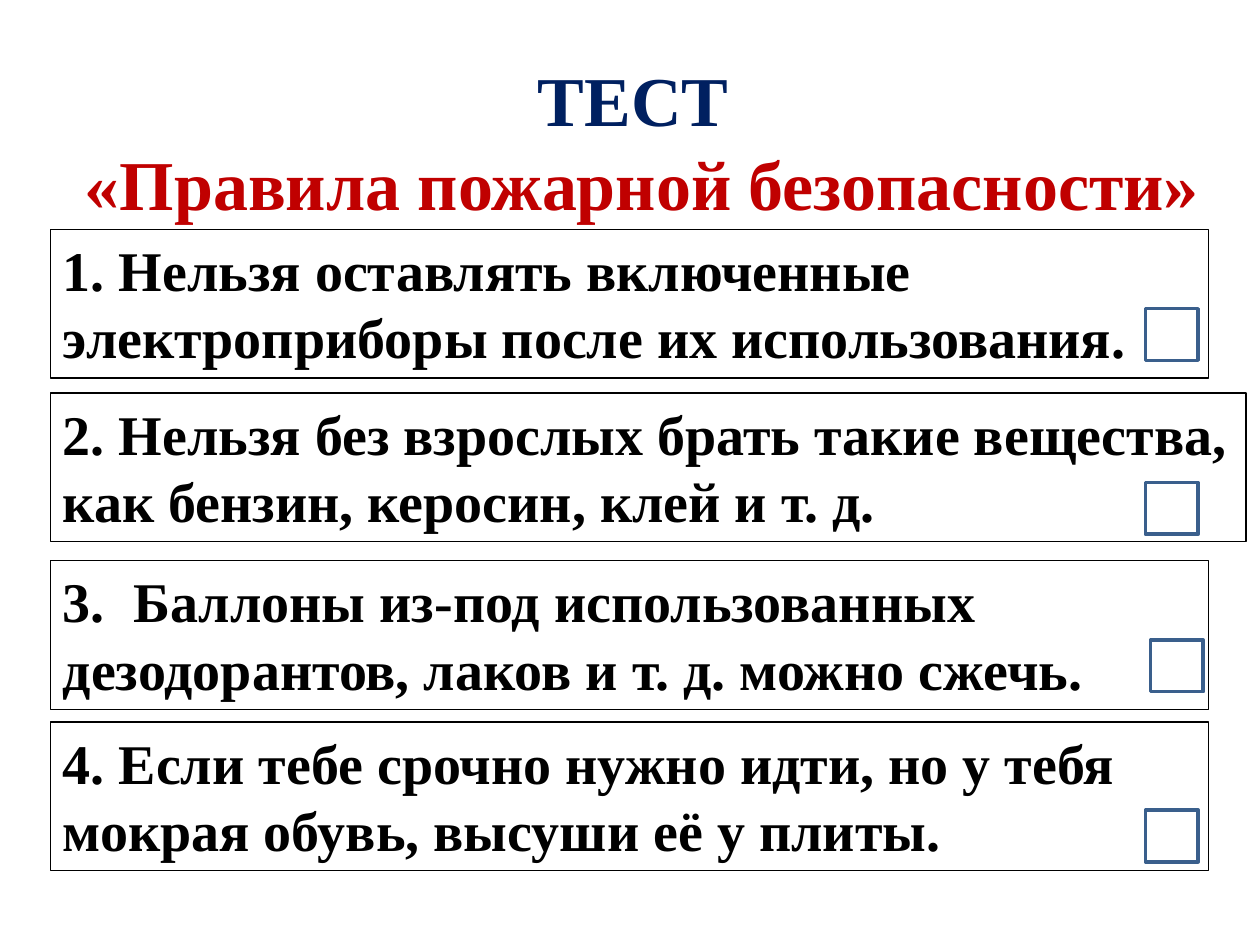
from dataclasses import dataclass

import pptx
import pptx.dml.color
import pptx.enum.shapes
import pptx.enum.text
import pptx.util
import lxml.etree


@dataclass(frozen=True)
class Theme:
    font: str = "Times New Roman"
    title_size: int = 40
    body_size: int = 32
    navy: str = "002060"
    red: str = "C00000"
    black: str = "000000"
    white: str = "FFFFFF"
    check_line: str = "3A5F8C"


THEME = Theme()
UNIT = pptx.util.Inches(0.1)  # the slide is a grid of 100 columns by 75 rows
LEFT, BOX_W, BOX_H = 4, 91.9, 11.8
CHECK_COL, CHECK_W, CHECK_H = 90.9, 4.2, 4.1

# top row, extra width, check box row, check box shift, first number, lines
QUESTIONS = [
    (18.2, 0, 24.5, 0, None,
     ["1. Нельзя оставлять включенные", "электроприборы после их использования."]),
    (31.2, 3, 38.3, 0, None,
     ["2. Нельзя без взрослых брать такие вещества,", "как бензин, керосин, клей и т. д."]),
    (44.5, 0, 50.8, 0.4, 3,
     ["Баллоны из-под использованных", "дезодорантов, лаков и т. д. можно сжечь."]),
    (57.3, 0, 64.3, 0, None,
     ["4. Если тебе срочно нужно идти, но у тебя", "мокрая обувь, высуши её у плиты."]),
]


def cells(*counts):
    return [round(n * UNIT) for n in counts]


def rgb(code):
    return pptx.dml.color.RGBColor.from_string(code)


def add_rect(s, place, line, width, fill=None):
    sp = s.shapes.add_shape(pptx.enum.shapes.MSO_SHAPE.RECTANGLE, *cells(*place))
    sp.shadow.inherit = False
    if fill:
        sp.fill.solid()
        sp.fill.fore_color.rgb = rgb(fill)
    else:
        sp.fill.background()
    sp.line.color.rgb = rgb(line)
    sp.line.width = pptx.util.Pt(width)
    return sp


def write_lines(tf, lines, size, align):
    """Write one paragraph for each (text, colour) pair."""
    tf.auto_size = pptx.enum.text.MSO_AUTO_SIZE.SHAPE_TO_FIT_TEXT
    tf.vertical_anchor = pptx.enum.text.MSO_ANCHOR.TOP
    for i, (text, color) in enumerate(lines):
        p = tf.paragraphs[0] if i == 0 else tf.add_paragraph()
        p.alignment = align
        r = p.add_run()
        r.text = text
        r.font.name = THEME.font
        r.font.size = pptx.util.Pt(size)
        r.font.bold = True
        r.font.color.rgb = rgb(color)


def number_paragraph(p, start):
    pPr = p._p.get_or_add_pPr()
    indent = pptx.util.Inches(0.56)
    pPr.set("marL", str(indent))
    pPr.set("indent", str(-indent))
    bullet = lxml.etree.SubElement(pPr, pptx.oxml.ns.qn("a:buAutoNum"))
    bullet.set("type", "arabicPeriod")
    bullet.set("startAt", str(start))


def add_title(s):
    tf = s.shapes.add_textbox(*cells(5.1, 4, 91.7, 14.5)).text_frame
    tf.word_wrap = False
    lines = [("ТЕСТ ", THEME.navy), ("«Правила пожарной безопасности»", THEME.red)]
    write_lines(tf, lines, THEME.title_size, pptx.enum.text.PP_ALIGN.CENTER)


def add_check_box(s, row, shift):
    add_rect(s, (CHECK_COL + shift, row, CHECK_W, CHECK_H), THEME.check_line, 2, THEME.white)


def add_question(s, row, extra, number, lines):
    sp = add_rect(s, (LEFT, row, BOX_W + extra, BOX_H), THEME.black, 0.75)
    tf = sp.text_frame
    tf.word_wrap = True
    write_lines(tf, [(text, THEME.black) for text in lines],
                THEME.body_size, pptx.enum.text.PP_ALIGN.LEFT)
    if number:
        number_paragraph(tf.paragraphs[0], number)


def main():
    prs = pptx.Presentation()
    prs.slide_width, prs.slide_height = cells(100, 75)
    s = prs.slides.add_slide(prs.slide_layouts[6])
    add_title(s)
    for _, _, check_row, shift, _, _ in QUESTIONS:
        add_check_box(s, check_row, shift)
    for row, extra, _, _, number, lines in QUESTIONS:
        add_question(s, row, extra, number, lines)
    prs.save("out.pptx")


if __name__ == "__main__":
    main()
